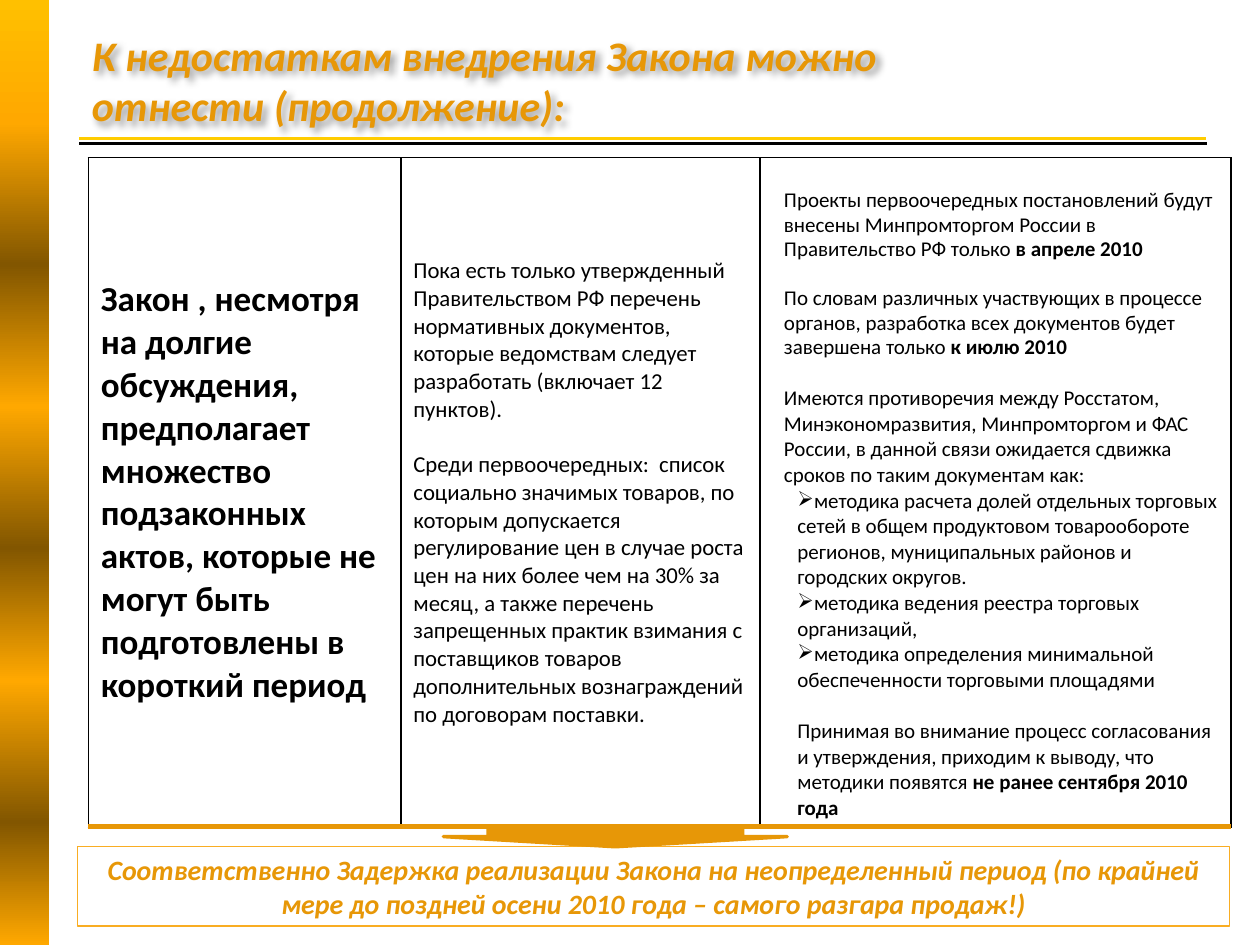
from dataclasses import dataclass

from lxml import etree
from pptx import Presentation
from pptx.dml.color import RGBColor
from pptx.enum.shapes import MSO_CONNECTOR, MSO_SHAPE
from pptx.enum.text import MSO_ANCHOR, PP_ALIGN
from pptx.oxml import parse_xml
from pptx.oxml.ns import nsdecls, qn
from pptx.util import Cm, Pt


@dataclass(frozen=True)
class Theme:
    font: str = "Calibri"
    accent: str = "E79707"
    frame: str = "F9AD23"
    gold: str = "FFCC00"
    black: str = "000000"
    white: str = "FFFFFF"
    stripe: tuple = ((0, "FFC000"), (13, "FFA800"), (28, "825600"), (43, "FFA800"),
                     (58, "825600"), (72, "FFA800"), (87, "825600"), (100, "FFA800"))
    title: int = 24
    lead: int = 20
    conclusion: int = 16
    middle: int = 13
    detail: int = 12


@dataclass(frozen=True)
class Para:
    """A paragraph: regular text, then an optional bold ending."""
    text: str
    bold: str = ""
    indent: float = 0
    before: float = 0
    spacing: float = 0
    bullet: bool = False


THEME = Theme()
TITLE = "К недостаткам внедрения Закона можно отнести (продолжение):"
CONCLUSION = ("Соответственно Задержка реализации Закона на неопределенный период "
              "(по крайней мере до поздней осени 2010 года – самого разгара продаж!)")
LEAD = [Para("", "Закон , несмотря на долгие обсуждения, предполагает множество подзаконных "
                 "актов, которые не могут быть подготовлены в короткий период")]
MIDDLE = [
    Para("Пока есть только утвержденный Правительством РФ перечень нормативных документов, "
         "которые ведомствам следует разработать (включает 12 пунктов)."),
    Para("Среди первоочередных:  список социально значимых товаров, по которым допускается "
         "регулирование цен в случае роста цен на них более чем на 30% за месяц, а также "
         "перечень запрещенных практик взимания с поставщиков товаров дополнительных "
         "вознаграждений по договорам поставки.", before=15.8),
]
DETAIL = [
    Para("Проекты первоочередных постановлений будут внесены Минпромторгом России в "
         "Правительство РФ только ", "в апреле 2010", indent=0.23, spacing=14),
    Para("По словам различных участвующих в процессе органов, разработка всех документов "
         "будет завершена только ", "к июлю 2010", indent=0.23, before=14, spacing=14),
    Para("Имеются противоречия между Росстатом, Минэкономразвития, Минпромторгом и ФАС "
         "России, в данной связи ожидается сдвижка сроков по таким документам как:",
         indent=0.23, before=14.6),
    Para("методика расчета долей отдельных торговых сетей в общем продуктовом "
         "товарообороте регионов, муниципальных районов и городских округов.",
         indent=0.5, bullet=True),
    Para("методика ведения реестра торговых организаций,", indent=0.5, bullet=True),
    Para("методика определения минимальной обеспеченности торговыми площадями",
         indent=0.5, bullet=True),
    Para("Принимая во внимание процесс согласования и утверждения, приходим к выводу, "
         "что методики появятся ", "не ранее сентября 2010 года", indent=0.5, before=14.6),
]


def rgb(color):
    return RGBColor.from_string(color)


def format_run(r, size, color, bold=False, italic=False):
    r.font.name, r.font.size = THEME.font, Pt(size)
    r.font.bold, r.font.italic = bold, italic
    r.font.color.rgb = rgb(color)


def add_line(s, x1, x2, y, color, width):
    line = s.shapes.add_connector(MSO_CONNECTOR.STRAIGHT, Cm(x1), Cm(y), Cm(x2), Cm(y))
    line.line.color.rgb, line.line.width = rgb(color), Pt(width)
    etree.SubElement(line._element.spPr, qn("a:effectLst"))


def add_shape(s, kind, x, y, w, h):
    sp = s.shapes.add_shape(kind, Cm(x), Cm(y), Cm(w), Cm(h))
    sp.shadow.inherit = False
    return sp


def add_stripe(s):
    sp = add_shape(s, MSO_SHAPE.RECTANGLE, 0, 0, 0.99, 19.05)
    sp.line.fill.background()
    stops = "".join(f'<a:gs pos="{pos * 1000}"><a:srgbClr val="{color}"/></a:gs>'
                    for pos, color in THEME.stripe)
    gradient = parse_xml(f'<a:gradFill {nsdecls("a")}><a:gsLst>{stops}</a:gsLst>'
                         '<a:lin ang="5400000" scaled="0"/></a:gradFill>')
    sp._element.spPr.find(qn("a:prstGeom")).addnext(gradient)


def format_title(s):
    title = s.shapes.title
    title.left, title.top, title.width, title.height = Cm(1.6), Cm(0.41), Cm(17.07), Cm(2.39)
    tf = title.text_frame
    tf.text = TITLE
    tf.word_wrap, tf.vertical_anchor = True, MSO_ANCHOR.MIDDLE
    p = tf.paragraphs[0]
    p.alignment = PP_ALIGN.LEFT
    p.line_spacing = 1.0
    format_run(p.runs[0], THEME.title, THEME.accent, True, True)
    title._element.spPr.append(parse_xml(
        f'<a:effectLst {nsdecls("a")}><a:outerShdw blurRad="50800" dist="38100" dir="2700000">'
        '<a:srgbClr val="000000"><a:alpha val="40000"/></a:srgbClr>'
        '</a:outerShdw></a:effectLst>'))


def add_borders(cell):
    tc_pr = cell._tc.get_or_add_tcPr()
    for i, side in enumerate(("lnL", "lnR", "lnT", "lnB")):
        tc_pr.insert(i, parse_xml(
            f'<a:{side} {nsdecls("a")} w="12700"><a:solidFill>'
            f'<a:srgbClr val="{THEME.black}"/></a:solidFill></a:{side}>'))


def write_paragraph(p, para, size):
    pPr = p._p.get_or_add_pPr()
    pPr.set("marL", str(Cm(para.indent)))
    pPr.set("indent", "0")
    if para.spacing:
        p.line_spacing = Pt(para.spacing)
    if para.before:
        p.space_before = Pt(para.before)
    if para.bullet:
        etree.SubElement(pPr, qn("a:buChar")).set("char", "➢")
    for text, bold in ((para.text, False), (para.bold, True)):
        if text:
            r = p.add_run()
            r.text = text
            format_run(r, size, THEME.black, bold)


def fill_cell(cell, paras, size):
    cell.fill.solid()
    cell.fill.fore_color.rgb = rgb(THEME.white)
    cell.vertical_anchor = MSO_ANCHOR.MIDDLE
    add_borders(cell)
    tf = cell.text_frame
    for i, para in enumerate(paras):
        write_paragraph(tf.add_paragraph() if i else tf.paragraphs[0], para, size)


def add_table(s):
    widths = (6.3, 7.24, 9.5)
    table = s.shapes.add_table(1, len(widths), Cm(1.78), Cm(3.18),
                               Cm(sum(widths)), Cm(13.5)).table
    table.first_row = table.horz_banding = False
    columns = ((LEAD, THEME.lead), (MIDDLE, THEME.middle), (DETAIL, THEME.detail))
    for i, (width, (paras, size)) in enumerate(zip(widths, columns)):
        table.columns[i].width = Cm(width)
        fill_cell(table.cell(0, i), paras, size)
    table.cell(0, 2).margin_top = Cm(0.62)


def add_conclusion(s):
    sp = add_shape(s, MSO_SHAPE.RECTANGLE, 1.57, 17.07, 23.22, 1.6)
    sp.fill.background()
    sp.line.color.rgb, sp.line.width = rgb(THEME.frame), Pt(0.75)
    tf = sp.text_frame
    tf.text = CONCLUSION
    tf.word_wrap, tf.vertical_anchor = True, MSO_ANCHOR.TOP
    p = tf.paragraphs[0]
    p.alignment = PP_ALIGN.CENTER
    format_run(p.runs[0], THEME.conclusion, THEME.accent, True, True)


def add_arrow(s):
    sp = add_shape(s, MSO_SHAPE.DOWN_ARROW, 8.94, 16.66, 6.93, 0.41)
    sp.adjustments[0], sp.adjustments[1] = 0.74, 0.5
    sp.fill.solid()
    sp.fill.fore_color.rgb = rgb(THEME.accent)
    sp.line.color.rgb, sp.line.width = rgb(THEME.accent), Pt(2)


def main():
    prs = Presentation()
    prs.slide_width, prs.slide_height = Cm(25.4), Cm(19.05)
    s = prs.slides.add_slide(prs.slide_layouts[5])
    add_line(s, 1.6, 24.33, 2.9, THEME.black, 1.75)
    add_line(s, 1.6, 24.31, 2.79, THEME.gold, 1.75)
    add_stripe(s)
    format_title(s)
    add_table(s)
    add_conclusion(s)
    add_arrow(s)
    add_line(s, 1.78, 24.82, 16.66, THEME.accent, 3)
    prs.save("out.pptx")


if __name__ == "__main__":
    main()
